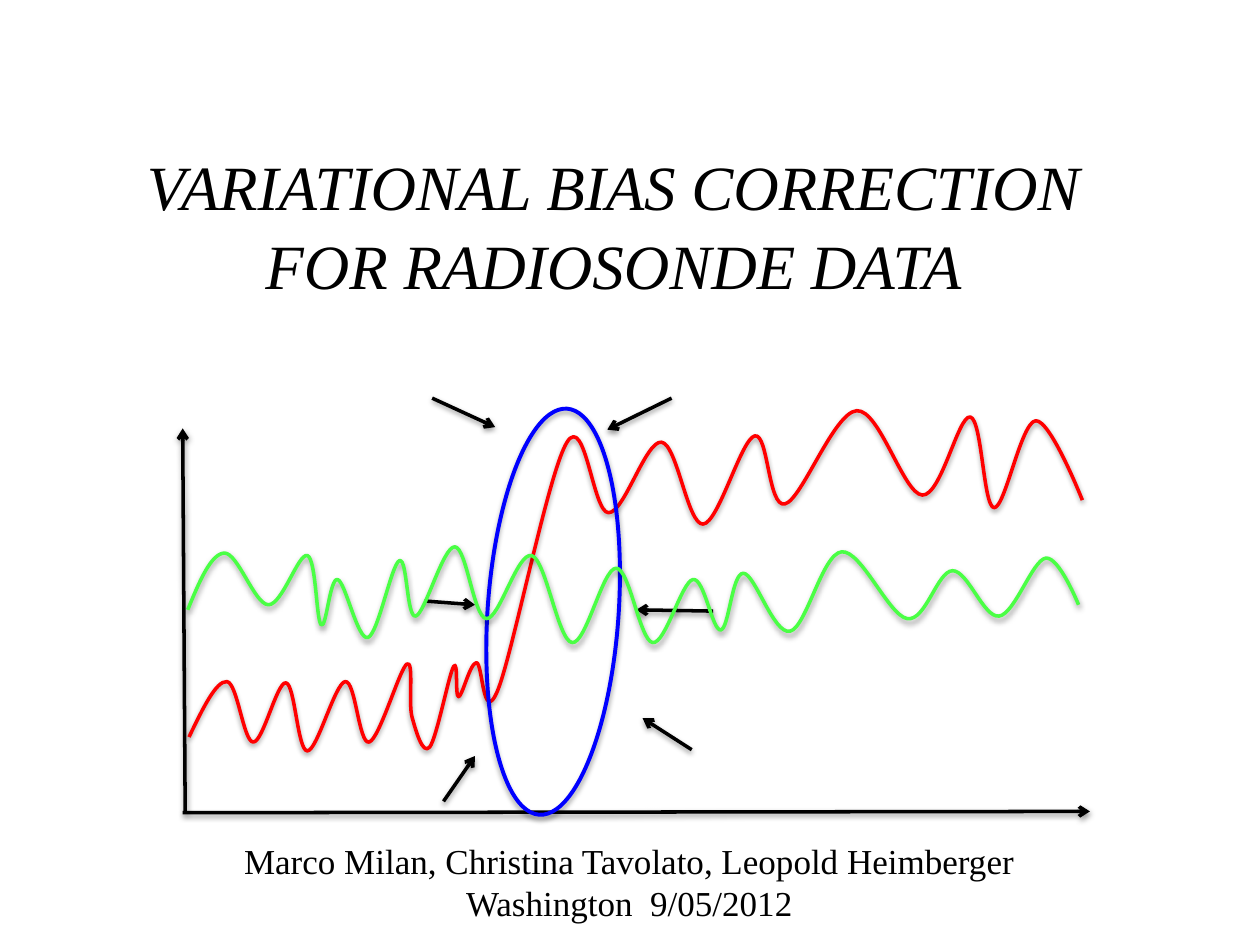
from lxml import etree
from pptx import Presentation
from pptx.dml.color import RGBColor
from pptx.enum.shapes import MSO_CONNECTOR, MSO_SHAPE
from pptx.enum.text import MSO_ANCHOR, PP_ALIGN
from pptx.oxml.ns import qn
from pptx.util import Inches, Pt

STRAIGHT = MSO_CONNECTOR.STRAIGHT
OVAL = MSO_SHAPE.OVAL
TOP = MSO_ANCHOR.TOP
CENTER = PP_ALIGN.CENTER

COLORS = {"black": "000000", "red": "FF0000", "green": "4AFF45", "blue": "0000FF"}
FONT = "Times New Roman"


def style_line(sp, color, width=2, dist=1.6, alpha=38, arrow=False):
    """Set the outline, an optional arrowhead and a soft shadow below."""
    sp.line.color.rgb = RGBColor.from_string(COLORS[color])
    sp.line.width = Pt(width)
    spPr = sp._element.spPr
    if arrow:
        etree.SubElement(spPr.find(qn("a:ln")), qn("a:tailEnd"), type="arrow")
    effects = etree.SubElement(spPr, qn("a:effectLst"))
    shadow = etree.SubElement(effects, qn("a:outerShdw"), blurRad=str(Pt(3.1)),
                              dist=str(Pt(dist)), dir="5400000", rotWithShape="0")
    clr = etree.SubElement(shadow, qn("a:srgbClr"), val=COLORS["black"])
    etree.SubElement(clr, qn("a:alpha"), val=str(alpha * 1000))


def add_curve(shapes, points, color):
    """Draw a smooth curve; each tangent runs parallel to its neighbours' chord."""
    pts = [(Inches(x), Inches(y)) for x, y in points]
    fb = shapes.build_freeform(*pts[0])
    fb.add_line_segments(pts[1:], close=False)
    sp = fb.convert_to_shape()
    sp.fill.background()
    style_line(sp, color)

    last = len(pts) - 1
    tangents = [(0, 0)]
    for (x0, y0), (x2, y2) in zip(pts, pts[2:]):
        tangents.append(((x2 - x0) / 6, (y2 - y0) / 6))
    tangents.append((0, 0))
    segments = list(sp._element.iter(qn("a:lnTo")))
    for i, seg in enumerate(segments):
        (ax, ay), (bx, by) = pts[i], pts[i + 1]
        c2 = (bx - tangents[i + 1][0], by - tangents[i + 1][1])
        c1 = (ax + tangents[i][0], ay + tangents[i][1])
        if i == 0:
            c1 = ((ax + c2[0]) / 2, (ay + c2[1]) / 2)
        if i + 1 == last:
            c2 = (bx, by)
        bez = etree.Element(qn("a:cubicBezTo"))
        for x, y in (c1, c2, (bx, by)):
            etree.SubElement(bez, qn("a:pt"), x=str(round(x - sp.left)),
                             y=str(round(y - sp.top)))
        seg.getparent().replace(seg, bez)


prs = Presentation()
prs.slide_width, prs.slide_height = Inches(10), Inches(7.5)
s = prs.slides.add_slide(prs.slide_layouts[6])

# Title and authors: box, wrap, top margin, line spacing, size, italic, lines
texts = [
    ((0.58, 1.06, 8.58, 2.55), True, 0.08, 1.05, 36, True,
     ["VARIATIONAL BIAS CORRECTION FOR RADIOSONDE DATA"]),
    ((1.81, 6.61, 6.37, 0.77), False, 0.05, 1.0, 20, False,
     ["Marco Milan, Christina Tavolato, Leopold Heimberger ",
      "Washington  9/05/2012"]),
]
for box, wrap, margin, spacing, size, italic, lines in texts:
    tf = s.shapes.add_textbox(*map(Inches, box)).text_frame
    tf.word_wrap = wrap
    tf.vertical_anchor = TOP
    tf.margin_top = Inches(margin)
    for i, line in enumerate(lines):
        p = tf.paragraphs[0] if i == 0 else tf.add_paragraph()
        p.alignment = CENTER
        p.line_spacing = spacing
        r = p.add_run()
        r.text = line
        r.font.name, r.font.size, r.font.italic = FONT, Pt(size), italic
        r.font.color.rgb = RGBColor.from_string(COLORS["black"])

axes = [(1.45, 6.45, 8.65, 6.44), (1.47, 6.44, 1.45, 3.4)]
pointers = [
    (5.49, 5.95, 5.1, 5.7), (3.43, 3.16, 3.93, 3.39), (3.52, 6.36, 3.77, 6),
    (5.33, 3.16, 4.82, 3.41), (5.66, 4.85, 5.05, 4.84), (3.37, 4.77, 3.77, 4.8),
]
biased = [
    (1.5, 5.85), (1.8, 5.41), (2.01, 5.89), (2.27, 5.42), (2.44, 5.96),
    (2.74, 5.41), (2.93, 5.89), (3.23, 5.27), (3.27, 5.69), (3.41, 5.93),
    (3.6, 5.29), (3.64, 5.53), (3.78, 5.26), (3.95, 5.48), (4.5, 3.51),
    (4.83, 4.07), (5.25, 3.51), (5.58, 4.16), (5.99, 3.46), (6.23, 4),
    (6.8, 3.26), (7.32, 3.93), (7.7, 3.31), (7.89, 4.03), (8.22, 3.34),
    (8.59, 3.97),
]
corrected = [
    (1.49, 4.84), (1.78, 4.39), (2.13, 4.8), (2.44, 4.41), (2.55, 4.96),
    (2.68, 4.6), (2.92, 5.06), (3.17, 4.45), (3.3, 4.89), (3.61, 4.34),
    (3.86, 4.91), (4.22, 4.41), (4.54, 5.1), (4.89, 4.51), (5.18, 5.1),
    (5.5, 4.6), (5.72, 5), (5.9, 4.55), (6.27, 5.01), (6.68, 4.38),
    (7.2, 4.91), (7.56, 4.53), (7.93, 4.89), (8.3, 4.43), (8.56, 4.8),
]

for ends in axes:
    style_line(s.shapes.add_connector(STRAIGHT, *map(Inches, ends)), "black", arrow=True)

add_curve(s.shapes, biased, "red")

jump = s.shapes.add_shape(OVAL, Inches(3.87), Inches(3.24), Inches(1.04), Inches(3.23))
jump.rotation = 3.9
jump.fill.background()
style_line(jump, "blue", width=2.25, dist=1.8, alpha=35)

for ends in pointers:
    style_line(s.shapes.add_connector(STRAIGHT, *map(Inches, ends)), "black", arrow=True)

add_curve(s.shapes, corrected, "green")

prs.save("out.pptx")
